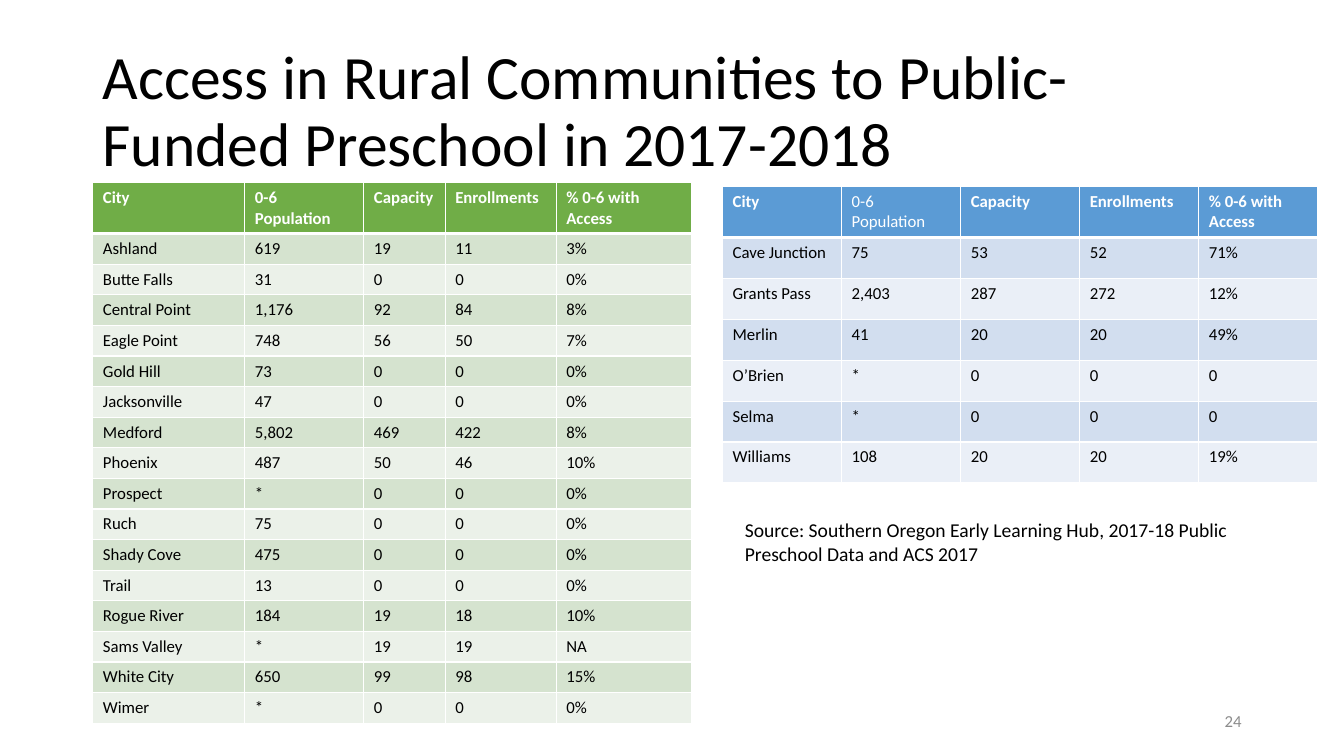
"""Build a slide on access to public-funded preschool in rural communities."""
from lxml.etree import SubElement
from pptx import Presentation
from pptx.dml.color import RGBColor
from pptx.enum.text import MSO_ANCHOR as Anchor, MSO_AUTO_SIZE as AutoSize, PP_ALIGN as Align
from pptx.oxml.ns import qn
from pptx.util import Cm, Pt

FONT = "Calibri"
COLORS = {"black": "000000", "white": "FFFFFF", "gray": "8C8C8C"}
GREEN = {"header": "70AD47", "odd": "D5E3CF", "even": "EBF1E9"}
BLUE = {"header": "5B9BD5", "odd": "D2DEEF", "even": "EAEFF7"}
HEADERS = ("City", "0-6 Population", "Capacity", "Enrollments", "% 0-6 with Access")
LEFT_CITIES = (
    ("Ashland", "619", "19", "11", "3%"),
    ("Butte Falls", "31", "0", "0", "0%"),
    ("Central Point", "1,176", "92", "84", "8%"),
    ("Eagle Point", "748", "56", "50", "7%"),
    ("Gold Hill", "73", "0", "0", "0%"),
    ("Jacksonville", "47", "0", "0", "0%"),
    ("Medford", "5,802", "469", "422", "8%"),
    ("Phoenix", "487", "50", "46", "10%"),
    ("Prospect", "*", "0", "0", "0%"),
    ("Ruch", "75", "0", "0", "0%"),
    ("Shady Cove", "475", "0", "0", "0%"),
    ("Trail", "13", "0", "0", "0%"),
    ("Rogue River", "184", "19", "18", "10%"),
    ("Sams Valley", "*", "19", "19", "NA"),
    ("White City", "650", "99", "98", "15%"),
    ("Wimer", "*", "0", "0", "0%"),
)
RIGHT_CITIES = (
    ("Cave Junction", "75", "53", "52", "71%"),
    ("Grants Pass", "2,403", "287", "272", "12%"),
    ("Merlin", "41", "20", "20", "49%"),
    ("O’Brien", "*", "0", "0", "0"),
    ("Selma", "*", "0", "0", "0"),
    ("Williams", "108", "20", "20", "19%"),
)


def add_run(paragraph, text, size, color, bold=False):
    """Add one formatted run to a paragraph."""
    run = paragraph.add_run()
    run.text = text
    run.font.name = FONT
    run.font.size = Pt(size)
    run.font.bold = bold
    run.font.color.rgb = RGBColor.from_string(color)


def add_title(slide, text):
    """Place and format the title placeholder."""
    title = slide.shapes.title
    title.left, title.top, title.width, title.height = Cm(2.33), Cm(1.01), Cm(29.21), Cm(3.68)
    frame = title.text_frame
    frame.word_wrap = True
    frame.auto_size = AutoSize.NONE
    frame.vertical_anchor = Anchor.MIDDLE
    paragraph = frame.paragraphs[0]
    paragraph.alignment = Align.LEFT
    paragraph.line_spacing = 0.9
    add_run(paragraph, text, 44, COLORS["black"])


def add_text(slide, box, text, size, color, align=Align.LEFT, anchor=Anchor.TOP):
    """Add a wrapping text box with one paragraph."""
    frame = slide.shapes.add_textbox(*(Cm(length) for length in box)).text_frame
    frame.word_wrap = True
    frame.vertical_anchor = anchor
    paragraph = frame.paragraphs[0]
    paragraph.alignment = align
    add_run(paragraph, text, size, color)


def set_borders(cell, bottom_width):
    """Draw white lines around a cell."""
    properties = cell._tc.get_or_add_tcPr()
    for side, width in (("L", 1), ("R", 1), ("T", 1), ("B", bottom_width)):
        line = SubElement(properties, qn(f"a:ln{side}"), w=str(Pt(width)))
        fill = SubElement(line, qn("a:solidFill"))
        SubElement(fill, qn("a:srgbClr"), val=COLORS["white"])


def fill_cell(cell, text, fill, color, bold, bottom_width):
    """Write and format one table cell."""
    set_borders(cell, bottom_width)
    cell.fill.solid()
    cell.fill.fore_color.rgb = RGBColor.from_string(fill)
    add_run(cell.text_frame.paragraphs[0], text, 12, color, bold)


def add_city_table(slide, left, top, widths, heights, cities, palette, plain_headers=()):
    """Add a banded table with a header row and one row per city."""
    header_height, row_height = heights
    table = slide.shapes.add_table(
        len(cities) + 1, len(HEADERS), Cm(left), Cm(top), Cm(sum(widths)),
        Cm(header_height + row_height * len(cities))).table
    for column, width in zip(table.columns, widths):
        column.width = Cm(width)
    for row in table.rows:
        row.height = Cm(row_height)
    table.rows[0].height = Cm(header_height)
    for column, text in enumerate(HEADERS):
        fill_cell(table.cell(0, column), text, palette["header"], COLORS["white"],
                  text not in plain_headers, 3)
    for row, city in enumerate(cities, 1):
        band = palette["odd" if row % 2 else "even"]
        for column, text in enumerate(city):
            fill_cell(table.cell(row, column), text, band, COLORS["black"], False, 1)


def main():
    """Build and save the presentation."""
    presentation = Presentation()
    presentation.slide_width, presentation.slide_height = Cm(33.87), Cm(19.05)
    slide = presentation.slides.add_slide(presentation.slide_layouts[5])
    add_title(slide, "Access in Rural Communities to Public-Funded Preschool in 2017-2018")
    add_city_table(slide, 2.34, 4.6, (3.83, 3, 2.05, 2.8, 3.4), (1.07, 0.74),
                   LEFT_CITIES, GREEN)
    add_city_table(slide, 18.21, 4.7, (3,) * 5, (1.03, 1.03),
                   RIGHT_CITIES, BLUE, ("0-6 Population",))
    add_text(slide, (18.52, 12.93, 13.59, 1.45),
             "Source: Southern Oregon Early Learning Hub, 2017-18 Public Preschool Data and ACS 2017",
             14, COLORS["black"])
    add_text(slide, (23.92, 17.66, 7.62, 1.01), "24", 12, COLORS["gray"],
             Align.RIGHT, Anchor.MIDDLE)
    presentation.save("out.pptx")


if __name__ == "__main__":
    main()
